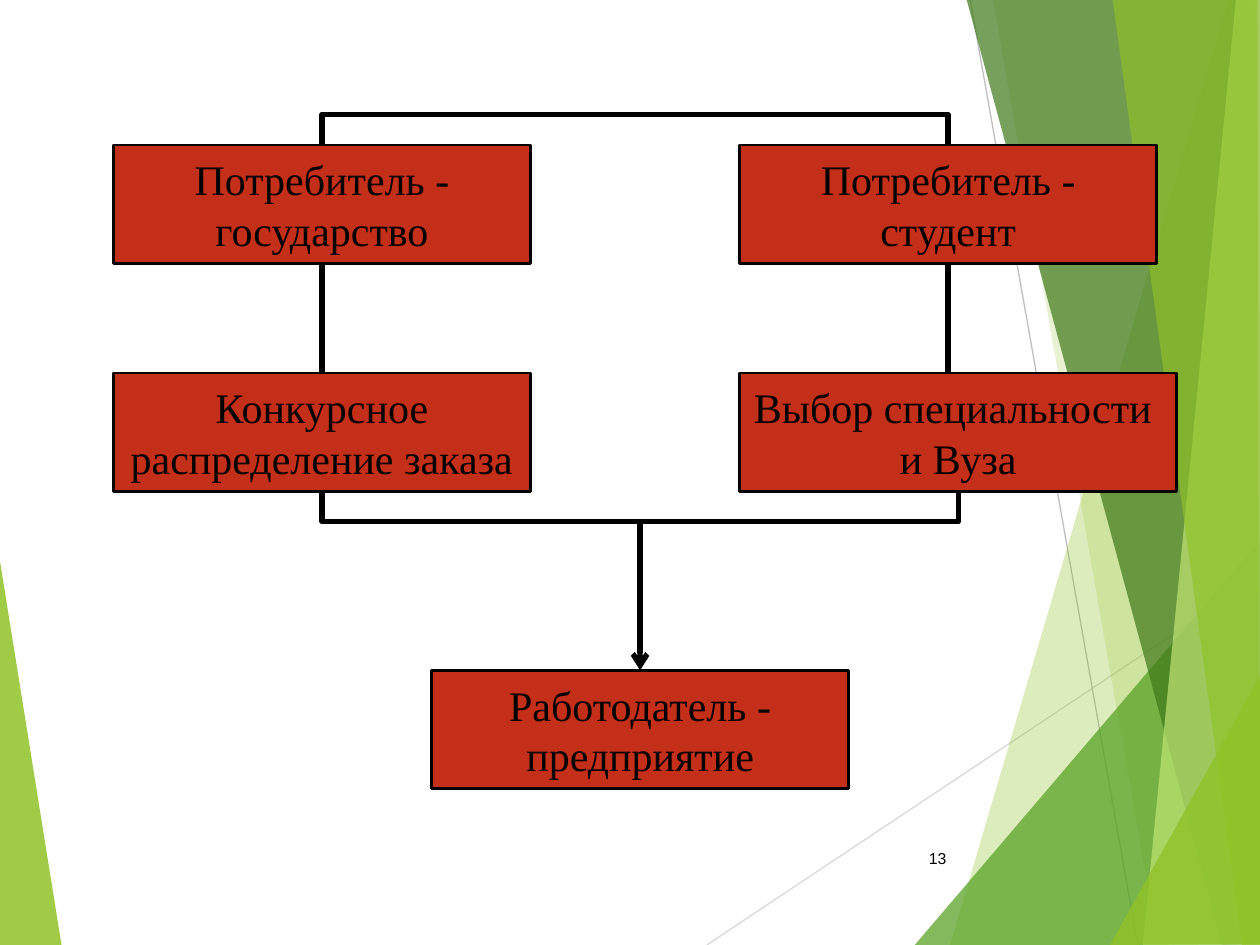
import dataclasses

import pptx
import pptx.dml.color
import pptx.enum.shapes
import pptx.enum.text
import pptx.oxml.ns
import pptx.util
from lxml import etree

COLUMNS, ROWS = 100, 75


@dataclasses.dataclass(frozen=True)
class Theme:
    """Colours, fonts and sizes of the slide."""
    box: str = "C42F1A"
    ink: str = "000000"
    lime: str = "90C226"
    green: str = "54A021"
    forest: str = "3F7819"
    pale: str = "C0E474"
    light_grey: str = "D9D9D9"
    grey: str = "BFBFBF"
    body_font: str = "Times New Roman"
    number_font: str = "Arial"
    body_size: int = 24
    number_size: int = 9
    outline: float = 1.5
    link: float = 3
    hairline: float = 0.75


class Painter:
    """Draws elements on one slide, with lengths in grid columns and rows."""

    def __init__(self, deck, theme):
        self.theme = theme
        self.slide = deck.slides.add_slide(deck.slide_layouts[6])
        self.shapes = self.slide.shapes
        self.column = deck.slide_width / COLUMNS
        self.row = deck.slide_height / ROWS

    def place(self, x, y):
        """Turn a grid position into slide units."""
        return round(x * self.column), round(y * self.row)

    def color(self, value):
        """Read a colour from its hexadecimal form."""
        return pptx.dml.color.RGBColor.from_string(value)

    def child(self, parent, tag, **attributes):
        """Append a drawing element to a parent."""
        return etree.SubElement(parent, pptx.oxml.ns.qn(tag), **attributes)

    def facet(self, color, opacity, points):
        """Draw a translucent polygon."""
        start, *others = [self.place(*point) for point in points]
        builder = self.shapes.build_freeform(*start)
        builder.add_line_segments(others, close=True)
        shape = builder.convert_to_shape()
        shape.shadow.inherit = False
        shape.line.fill.background()
        shape.fill.solid()
        shape.fill.fore_color.rgb = self.color(color)
        tint = shape._element.spPr.find(".//" + pptx.oxml.ns.qn("a:srgbClr"))
        self.child(tint, "a:alpha", val=str(opacity * 1000))

    def line(self, begin, end, color=None, width=None, arrow=False, elbow=False):
        """Draw a connector between two grid positions."""
        kinds = pptx.enum.shapes.MSO_CONNECTOR
        kind = kinds.ELBOW if elbow else kinds.STRAIGHT
        line = self.shapes.add_connector(kind, *self.place(*begin), *self.place(*end))
        line.line.color.rgb = self.color(color or self.theme.ink)
        line.line.width = pptx.util.Pt(width or self.theme.link)
        properties = line._element.spPr
        if arrow:
            self.child(properties.find(pptx.oxml.ns.qn("a:ln")), "a:tailEnd", type="arrow")
        self.child(properties, "a:effectLst")
        return line

    def bracket(self, left, right, y, side, depth=2.5, thickness=0.1):
        """Join two columns with an elbow that rises (side -1) or drops (side 1)."""
        middle, reach = (left + right) / 2, side * (right - left) / 2
        line = self.line((middle + thickness / 2, y - reach),
                         (middle - thickness / 2, y + reach), elbow=True)
        properties = line._element.spPr
        properties.xfrm.set("rot", str((180 + side * 90) * 60000))
        geometry = properties.find(pptx.oxml.ns.qn("a:prstGeom"))
        for old in list(geometry):
            geometry.remove(old)
        guides = self.child(geometry, "a:avLst")
        share = round(depth / thickness * 100000)
        self.child(guides, "a:gd", name="adj1", fmla=f"val {share}")

    def letter(self, shape, text, font, size, align):
        """Set and format the text of a shape."""
        frame = shape.text_frame
        frame.word_wrap = True
        frame.vertical_anchor = pptx.enum.text.MSO_ANCHOR.MIDDLE
        frame.text = text
        for para in frame.paragraphs:
            para.alignment = align
            for span in para.runs:
                span.font.name = font
                span.font.size = pptx.util.Pt(size)
                span.font.color.rgb = self.color(self.theme.ink)

    def box(self, x, y, width, height, text):
        """Draw a filled rectangle with centred text."""
        shape = self.shapes.add_shape(pptx.enum.shapes.MSO_SHAPE.RECTANGLE,
                                      *self.place(x, y), *self.place(width, height))
        shape.shadow.inherit = False
        shape.fill.solid()
        shape.fill.fore_color.rgb = self.color(self.theme.box)
        shape.line.color.rgb = self.color(self.theme.ink)
        shape.line.width = pptx.util.Pt(self.theme.outline)
        self.letter(shape, text, self.theme.body_font, self.theme.body_size,
                    pptx.enum.text.PP_ALIGN.CENTER)

    def page_number(self, x, y, width, height, text):
        """Add the slide number."""
        shape = self.shapes.add_textbox(*self.place(x, y), *self.place(width, height))
        self.letter(shape, text, self.theme.number_font, self.theme.number_size,
                    pptx.enum.text.PP_ALIGN.RIGHT)


def draw_backdrop(painter):
    """Draw the green facets and the thin lines behind the diagram."""
    theme = painter.theme
    painter.facet(theme.lime, 85, [(-0.1, 43.9), (4.9, 75.1), (-0.1, 75)])
    painter.line((56.1, 75), (100.1, 45.7), theme.light_grey, theme.hairline)
    painter.line((77, 0), (90.3, 75), theme.grey, theme.hairline)
    facets = [
        (theme.lime, 30, [(97.5, 0), (75.4, 75), (100.2, 75.1), (100.1, 0.1)]),
        (theme.lime, 20, [(78.8, -0.1), (91.9, 75), (100.1, 75), (100.1, -0.1)]),
        (theme.green, 72, [(72.6, 75), (100, 42.9), (100.1, 75)]),
        (theme.forest, 70, [(76.7, -0.1), (97, 75), (100.1, 74.9), (100.1, -0.1)]),
        (theme.pale, 70, [(98.1, -0.1), (90.7, 75), (100.1, 75), (100, -0.1)]),
        (theme.lime, 65, [(88.3, -0.1), (98.6, 75), (100, 75), (99.8, -0.1)]),
        (theme.lime, 80, [(88.1, 75), (100.1, 53.5), (100.1, 74.9)]),
    ]
    for facet in facets:
        painter.facet(*facet)


def draw_diagram(painter):
    """Draw the consumers, their choices and the employer."""
    left, right, width, height = 9, 58.7, 33.1, 9.4
    consumers, choices, employer = 11.5, 29.6, 53.2
    wide = 34.7
    state, student = left + width / 2, right + width / 2
    choice = right + wide / 2
    meeting = (state + choice) / 2
    boxes = [
        (meeting - width / 2, employer, width, "Работодатель - предприятие"),
        (left, choices, width, "Конкурсное распределение заказа"),
        (right, consumers, width, "Потребитель - студент"),
        (left, consumers, width, "Потребитель - государство"),
        (right, choices, wide, "Выбор специальности \nи Вуза"),
    ]
    for x, y, box_width, text in boxes:
        painter.box(x, y, box_width, height, text)
    painter.bracket(state, student, consumers, side=-1)
    for x in (student, state):
        painter.line((x, consumers + height), (x, choices))
    painter.bracket(state, choice, choices + height, side=1)
    painter.line((meeting, choices + height + 2.4), (meeting, employer), arrow=True)


def main():
    """Build and save the slide."""
    deck = pptx.Presentation()
    deck.slide_width = pptx.util.Inches(10)
    deck.slide_height = pptx.util.Inches(7.5)
    painter = Painter(deck, Theme())
    draw_backdrop(painter)
    painter.page_number(70.5, 66.1, 5.6, 4, "13")
    draw_diagram(painter)
    deck.save("out.pptx")


if __name__ == "__main__":
    main()
